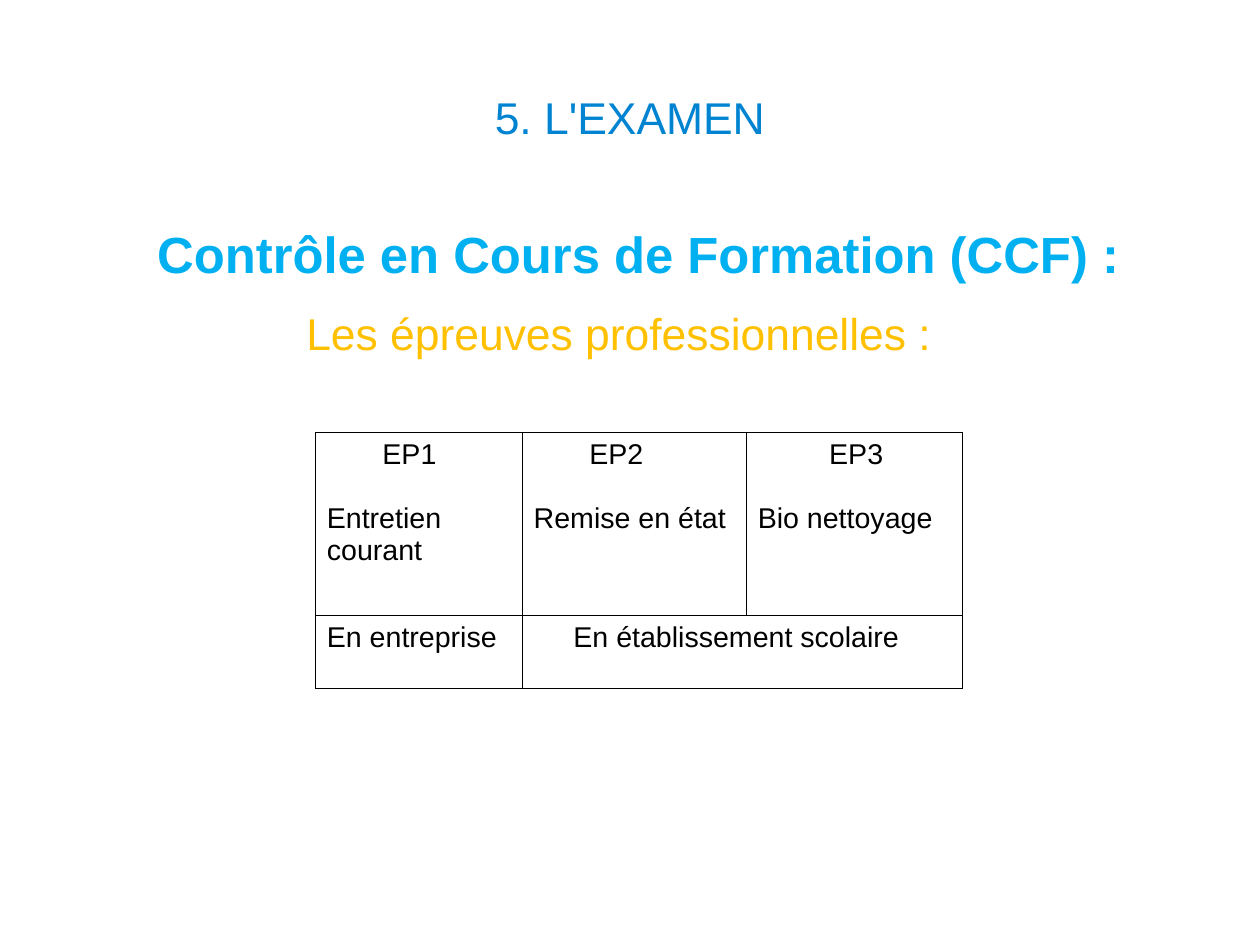
from dataclasses import dataclass

import pptx
import pptx.dml.color
import pptx.enum.text
import pptx.oxml
import pptx.oxml.ns
import pptx.util

BLUE = pptx.dml.color.RGBColor(0x00, 0x84, 0xD1)
SKY = pptx.dml.color.RGBColor(0x00, 0xB0, 0xF0)
AMBER = pptx.dml.color.RGBColor(0xFF, 0xC0, 0x00)
BLACK = pptx.dml.color.RGBColor(0x00, 0x00, 0x00)
FONT = "Arial"
SLIDE_WIDTH = pptx.util.Cm(28)
SLIDE_HEIGHT = pptx.util.Cm(21)
GRID_STEP = 0.1  # inches per grid column or row
LINE_GAP = 20  # about one line of 18 pt text
ALIGN = pptx.enum.text.PP_ALIGN


@dataclass
class Line:
    text: str
    size: float = 18
    color: pptx.dml.color.RGBColor = BLACK
    bold: bool = False
    align: ALIGN = ALIGN.LEFT
    indent: float = 0
    before: float = 0
    after: float = 0


@dataclass
class Exam:
    row: int
    column: int
    lines: list[Line]
    last_column: int | None = None


def grid(units: float) -> int:
    return pptx.util.Inches(units * GRID_STEP)


def write(frame, lines: list[Line]) -> None:
    for index, line in enumerate(lines):
        paragraph = frame.add_paragraph() if index else frame.paragraphs[0]
        paragraph.alignment = line.align
        paragraph.space_before = pptx.util.Pt(line.before)
        paragraph.space_after = pptx.util.Pt(line.after)
        properties = paragraph._p.get_or_add_pPr()
        properties.set("marL", str(grid(line.indent)))
        properties.set("indent", "0")
        run = paragraph.add_run()
        run.text = line.text
        run.font.name = FONT
        run.font.size = pptx.util.Pt(line.size)
        run.font.bold = line.bold
        run.font.color.rgb = line.color


def prepare(shape, left: float, top: float, width: float, height: float,
            anchor: pptx.enum.text.MSO_ANCHOR):
    shape.left, shape.top = grid(left), grid(top)
    shape.width, shape.height = grid(width), grid(height)
    frame = shape.text_frame
    frame.margin_left = frame.margin_right = 0
    frame.margin_top = frame.margin_bottom = 0
    frame.word_wrap = True
    frame.auto_size = pptx.enum.text.MSO_AUTO_SIZE.NONE
    frame.vertical_anchor = anchor
    return frame


def outline(cell) -> None:
    cell.fill.background()
    properties = cell._tc.get_or_add_tcPr()
    for position, side in enumerate(("lnL", "lnR", "lnT", "lnB")):
        border = pptx.oxml.parse_xml(
            f'<a:{side} {pptx.oxml.ns.nsdecls("a")} w="{pptx.util.Pt(1)}">'
            f'<a:solidFill><a:srgbClr val="{BLACK}"/></a:solidFill></a:{side}>')
        properties.insert(position, border)


def exam(number: int, subject: str, indent: float) -> Exam:
    return Exam(0, number - 1, [Line(f"EP{number}", indent=indent),
                                Line(subject, before=LINE_GAP)])


HEADINGS = [
    Line("Contrôle en Cours de Formation (CCF) :", 32, SKY, True,
         ALIGN.CENTER, after=14.2),
    Line("Les épreuves professionnelles :", 28, AMBER, indent=20.5, after=14.2),
]
COLUMNS = (18.1, 19.6, 18.9)
ROWS = (16, 6.4)
EXAMS = [
    exam(1, "Entretien courant", 4.86),
    exam(2, "Remise en état", 4.86),
    exam(3, "Bio nettoyage", 6.25),
    Exam(1, 0, [Line("En entreprise")]),
    Exam(1, 1, [Line("En établissement scolaire", indent=3.47)], last_column=2),
]


def main() -> None:
    deck = pptx.Presentation()
    deck.slide_width = SLIDE_WIDTH
    deck.slide_height = SLIDE_HEIGHT
    slide = deck.slides.add_slide(deck.slide_layouts[5])

    # Title and headings
    title = prepare(slide.shapes.title, 5.5, 3.3, 99.2, 13.8,
                    pptx.enum.text.MSO_ANCHOR.MIDDLE)
    write(title, [Line("5. L'EXAMEN", 28, BLUE, align=ALIGN.CENTER)])
    headings = prepare(slide.shapes.add_textbox(0, 0, 0, 0), 6.3, 19.45, 99.2, 54.6,
                       pptx.enum.text.MSO_ANCHOR.TOP)
    write(headings, HEADINGS)

    # Exam table
    exams = slide.shapes.add_table(
        len(ROWS), len(COLUMNS), grid(27.6), grid(37.85),
        grid(sum(COLUMNS)), grid(sum(ROWS))).table
    exams.first_row = exams.horz_banding = False
    for column, width in zip(exams.columns, COLUMNS):
        column.width = grid(width)
    for row, height in zip(exams.rows, ROWS):
        row.height = grid(height)
    for cell in exams.iter_cells():
        outline(cell)
    for entry in EXAMS:
        cell = exams.cell(entry.row, entry.column)
        if entry.last_column is not None:
            cell.merge(exams.cell(entry.row, entry.last_column))
        write(cell.text_frame, entry.lines)

    deck.save("out.pptx")


if __name__ == "__main__":
    main()
